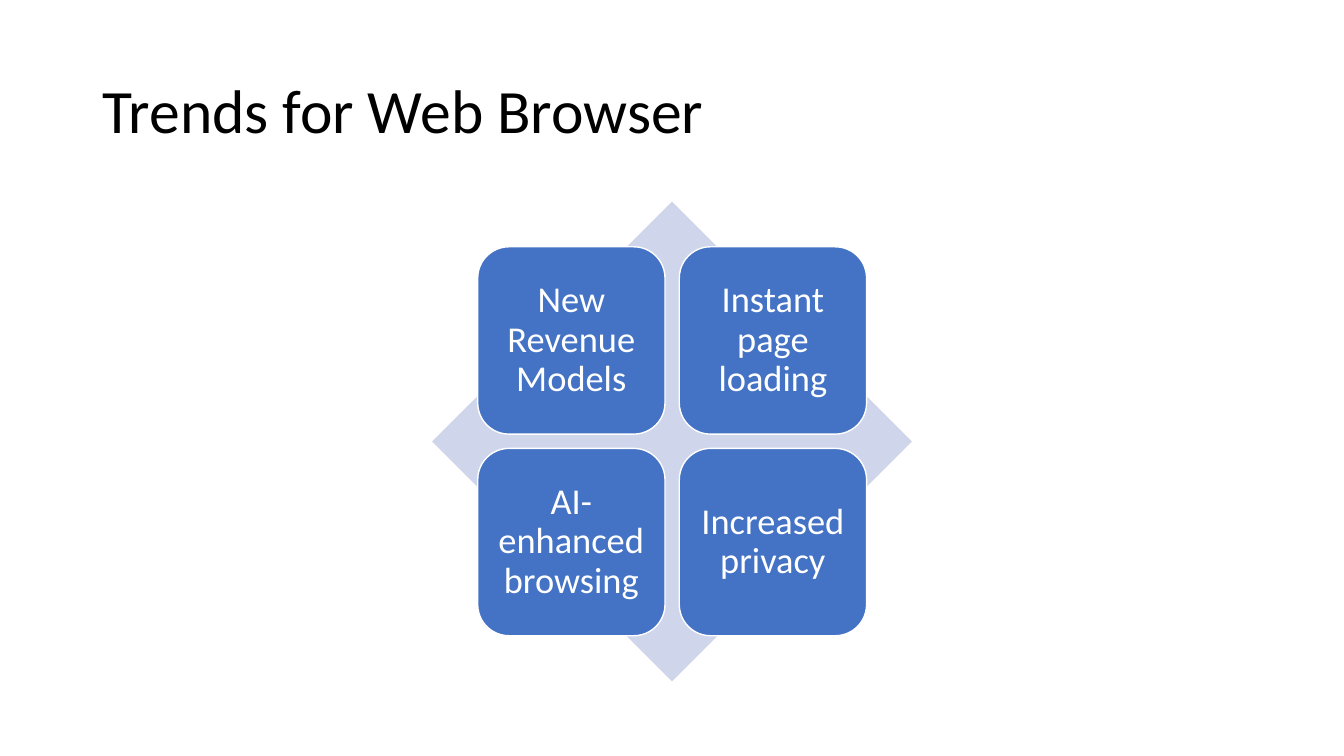
"""Build a slide of four web browser trends arranged over a diamond."""
from pptx import Presentation
from pptx.dml.color import RGBColor
from pptx.enum.shapes import MSO_SHAPE
from pptx.enum.text import MSO_ANCHOR, MSO_AUTO_SIZE, PP_ALIGN
from pptx.util import Cm, Pt

DIAMOND = MSO_SHAPE.DIAMOND
ROUNDED_RECTANGLE = MSO_SHAPE.ROUNDED_RECTANGLE
MIDDLE = MSO_ANCHOR.MIDDLE
NO_AUTOFIT = MSO_AUTO_SIZE.NONE
LEFT = PP_ALIGN.LEFT
CENTER = PP_ALIGN.CENTER

BLACK = RGBColor(0x00, 0x00, 0x00)
WHITE = RGBColor(0xFF, 0xFF, 0xFF)
BLUE = RGBColor(0x44, 0x72, 0xC4)
PALE_BLUE = RGBColor(0xCF, 0xD5, 0xEA)

FONT = "Calibri"
TRENDS = [
    "New Revenue Models",
    "Instant page loading",
    "AI-enhanced browsing",
    "Increased privacy",
]
COLUMNS = 2
TILE_LEFT, TILE_TOP = 12.04, 6.22
TILE_SIZE, TILE_STEP = 4.72, 5.08
TILE_INSET = Cm(0.26)


def write_text(text_frame, text, size, color, alignment):
    text_frame.word_wrap = True
    text_frame.auto_size = NO_AUTOFIT
    text_frame.vertical_anchor = MIDDLE
    paragraph = text_frame.paragraphs[0]
    paragraph.alignment = alignment
    paragraph.line_spacing = 0.9
    run = paragraph.add_run()
    run.text = text
    run.font.name = FONT
    run.font.size = Pt(size)
    run.font.color.rgb = color


presentation = Presentation()
presentation.slide_width = Cm(33.87)
presentation.slide_height = Cm(19.05)
slide = presentation.slides.add_slide(presentation.slide_layouts[5])

title = slide.shapes.title
title.left, title.top = Cm(2.33), Cm(1.01)
title.width, title.height = Cm(29.21), Cm(3.68)
write_text(title.text_frame, "Trends for Web Browser", 44, BLACK, LEFT)

diamond = slide.shapes.add_shape(DIAMOND, Cm(10.89), Cm(5.08), Cm(12.09), Cm(12.09))
diamond.shadow.inherit = False
diamond.fill.solid()
diamond.fill.fore_color.rgb = PALE_BLUE
diamond.line.fill.background()

for index, trend in enumerate(TRENDS):
    row, column = divmod(index, COLUMNS)
    tile = slide.shapes.add_shape(
        ROUNDED_RECTANGLE,
        Cm(TILE_LEFT + column * TILE_STEP),
        Cm(TILE_TOP + row * TILE_STEP),
        Cm(TILE_SIZE),
        Cm(TILE_SIZE),
    )
    tile.shadow.inherit = False
    tile.fill.solid()
    tile.fill.fore_color.rgb = BLUE
    tile.line.color.rgb = WHITE
    tile.line.width = Pt(1)
    text_frame = tile.text_frame
    text_frame.margin_left = text_frame.margin_right = TILE_INSET
    text_frame.margin_top = text_frame.margin_bottom = TILE_INSET
    write_text(text_frame, trend, 26, WHITE, CENTER)

presentation.save("out.pptx")
